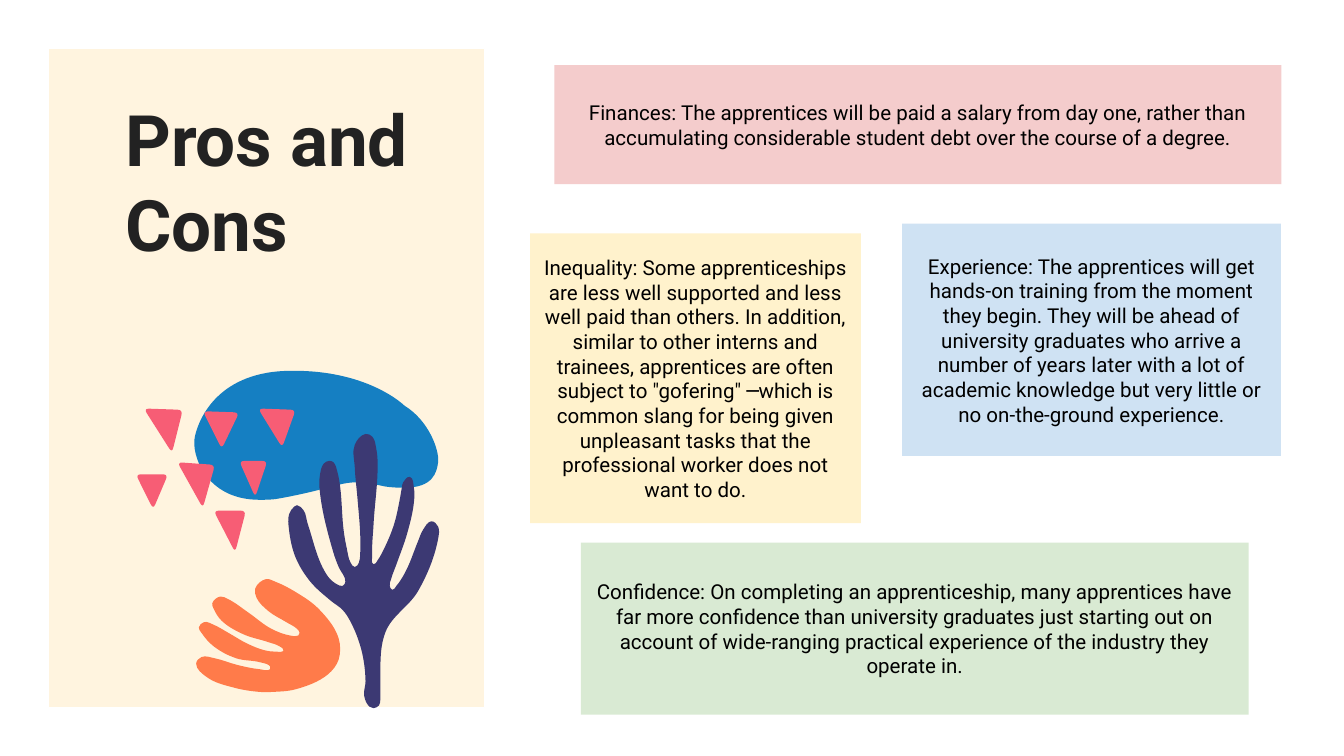
from dataclasses import dataclass
from math import dist

from lxml.etree import SubElement
from pptx import Presentation
from pptx.dml.color import RGBColor
from pptx.enum.shapes import MSO_SHAPE
from pptx.enum.text import MSO_ANCHOR, PP_ALIGN
from pptx.oxml.ns import qn
from pptx.util import Cm, Pt


@dataclass(frozen=True)
class Theme:
    font: str = "Roboto"
    title_size: int = 38
    body_size: int = 11
    title: str = "222222"
    body: str = "000000"
    white: str = "FFFFFF"
    panel: str = "FFF4DF"
    blue: str = "157FC2"
    pink: str = "F75D75"
    navy: str = "3C3973"
    orange: str = "FF7B4A"
    finances: str = "F4CCCC"
    inequality: str = "FFF2CC"
    experience: str = "CFE2F3"
    confidence: str = "D9EAD3"


# Outline points are in hundredths of an inch.
CLOUD = [((163, 276), (148, 311), (145, 325)), ((142, 338), (153, 372), (193, 372)),
         ((198, 372), (203, 372), (208, 371)), ((246, 364), (252, 359), (266, 359)),
         ((271, 359), (277, 360), (286, 362)), ((292, 363), (297, 363), (301, 363)),
         ((322, 363), (325, 352), (326, 344)), ((327, 335), (319, 313), (301, 302)),
         ((301, 302), (275, 276), (219, 276)), ((218, 276), (218, 276), (217, 276))]
TREE = [(272, 323), (264, 331), (264, 348), (266, 371), (268, 397), (268, 412),
        (267, 419), (264, 422), (261, 419), (258, 408), (256, 397), (251, 351),
        (248, 344), (245, 343), (241, 345), (238, 354), (238, 366), (248, 411),
        (252, 422), (257, 433), (255, 436), (251, 435), (244, 429), (229, 390),
        (226, 380), (221, 376), (219, 377), (215, 383), (215, 394), (220, 415),
        (231, 433), (246, 447), (255, 454), (261, 463), (269, 484), (272, 507),
        (271, 518), (275, 526), (278, 527), (282, 525), (283, 521), (283, 515),
        (287, 470), (311, 440), (326, 401), (326, 392), (321, 388), (315, 394),
        (311, 403), (303, 423), (298, 432), (295, 436), (292, 439), (290, 436),
        (291, 431), (295, 420), (303, 397), (308, 374), (308, 363), (305, 355),
        (300, 359), (299, 363), (298, 369), (293, 391), (284, 412), (281, 417),
        (278, 420), (277, 413), (278, 390), (281, 345), (280, 334), (277, 325)]
LEAF = [(198, 431), (190, 438), (191, 445), (200, 455), (213, 463), (221, 468),
        (223, 471), (222, 473), (216, 473), (202, 468), (185, 456), (170, 446),
        (164, 444), (158, 449), (159, 453), (165, 462), (181, 472), (200, 478),
        (208, 481), (211, 484), (205, 485), (197, 484), (184, 479), (170, 471),
        (159, 465), (152, 463), (148, 467), (150, 471), (159, 481), (176, 490),
        (194, 493), (201, 496), (201, 498), (193, 498), (177, 495), (160, 490),
        (150, 489), (146, 494), (154, 504), (175, 512), (194, 515), (202, 515),
        (220, 513), (244, 502), (252, 491), (252, 475), (237, 453), (219, 440),
        (205, 433)]
PETALS = [[(107, 304), (136, 305), (128, 337)],
          [(151, 306), (178, 307), (165, 334)],
          [(192, 304), (220, 305), (210, 333)],
          [(178, 343), (199, 343), (190, 370)],
          [(132, 344), (160, 346), (151, 378)],
          [(101, 353), (125, 353), (114, 379)],
          [(159, 380), (183, 380), (175, 411)]]


def unit(a, b):
    return tuple((q - p) / dist(a, b) for p, q in zip(a, b))


def move(point, direction, length):
    return tuple(p + length * q for p, q in zip(point, direction))


def neighbours(points):
    return zip(points[-1:] + points[:-1], points, points[1:] + points[:1])


def smooth(points):
    tangents = []
    for a, b, c in neighbours(points):
        bisector = tuple(u + v for u, v in zip(unit(a, b), unit(b, c)))
        tangents.append(unit((0, 0), bisector))
    curves = []
    for a, b, u, v in zip(points, points[1:] + points[:1],
                          tangents, tangents[1:] + tangents[:1]):
        reach = dist(a, b) / 3
        curves.append((move(a, u, reach), move(b, v, -reach), b))
    return curves


def round_corners(points, cut=4):
    curves = []
    for a, b, c in neighbours(points):
        back, ahead = unit(b, a), unit(b, c)
        start, end = move(b, back, cut), move(b, ahead, cut)
        curves.append((start, start, start))
        curves.append((move(b, back, cut / 3), move(b, ahead, cut / 3), end))
    return curves


def write(tf, text, *, font, size, color, bold=False, align=PP_ALIGN.LEFT,
          anchor=MSO_ANCHOR.TOP):
    tf.word_wrap = True
    tf.vertical_anchor = anchor
    tf.margin_left = tf.margin_right = tf.margin_top = tf.margin_bottom = Cm(0.25)
    p = tf.paragraphs[0]
    p.alignment = align
    r = p.add_run()
    r.text = text
    r.font.name = font
    r.font.size = Pt(size)
    r.font.bold = bold
    r.font.color.rgb = RGBColor.from_string(color)


class SlideBuilder:
    def __init__(self, slide, theme):
        self.s = slide
        self.theme = theme

    def paint(self, sp, fill, line=None):
        sp.shadow.inherit = False
        sp.fill.solid()
        sp.fill.fore_color.rgb = RGBColor.from_string(fill)
        if line:
            sp.line.color.rgb = RGBColor.from_string(line)
            sp.line.width = Pt(0.75)
        else:
            sp.line.fill.background()

    def rect(self, box, fill, line=None):
        sp = self.s.shapes.add_shape(MSO_SHAPE.RECTANGLE, *map(Cm, box))
        self.paint(sp, fill, line)
        return sp

    def outline(self, curves, fill):
        scale = Cm(2.54) / 100
        curves = [[(x * scale, y * scale) for x, y in curve] for curve in curves]
        ends = [curve[-1] for curve in curves]
        builder = self.s.shapes.build_freeform(*ends[-1], scale=1.0)
        builder.add_line_segments(ends, close=True)
        sp = builder.convert_to_shape()
        segments = list(sp._element.iter(qn("a:lnTo")))
        for segment, curve in zip(segments, curves):
            if curve[0] == curve[-1]:
                continue
            segment.tag = qn("a:cubicBezTo")
            segment.remove(segment[0])
            for x, y in curve:
                SubElement(segment, qn("a:pt"), x=str(round(x - sp.left)),
                           y=str(round(y - sp.top)))
        self.paint(sp, fill)

    def title(self, box, text):
        sp = self.s.shapes.add_textbox(*map(Cm, box))
        write(sp.text_frame, text, font=self.theme.font, size=self.theme.title_size,
              color=self.theme.title, bold=True)

    def card(self, box, fill, text):
        sp = self.rect(box, fill)
        write(sp.text_frame, text, font=self.theme.font, size=self.theme.body_size,
              color=self.theme.body, align=PP_ALIGN.CENTER, anchor=MSO_ANCHOR.MIDDLE)


def main():
    prs = Presentation()
    prs.slide_width, prs.slide_height = Cm(25.4), Cm(14.29)
    theme = Theme()
    b = SlideBuilder(prs.slides.add_slide(prs.slide_layouts[6]), theme)

    b.rect((0.92, 0.92, 8.24, 12.45), theme.panel, theme.white)
    b.outline(CLOUD, theme.blue)
    for petal in PETALS:
        b.outline(round_corners(petal), theme.pink)
    b.outline(smooth(TREE), theme.navy)
    b.outline(smooth(LEAF), theme.orange)
    b.title((2.12, 1.55, 5.99, 4.72), "Pros and Cons")

    cards = [
        ((10.98, 10.26, 12.62, 3.25), theme.confidence,
         "Confidence: On completing an apprenticeship, many apprentices have far more "
         "confidence than university graduates just starting out on account of "
         "wide-ranging practical experience of the industry they operate in."),
        ((17.05, 4.23, 7.16, 4.39), theme.experience,
         "Experience: The apprentices will get hands-on training from the moment they "
         "begin. They will be ahead of university graduates who arrive a number of years "
         "later with a lot of academic knowledge but very little or no on-the-ground "
         "experience."),
        ((10.02, 4.41, 6.25, 5.48), theme.inequality,
         "Inequality: Some apprenticeships are less well supported and less well paid "
         "than others. In addition, similar to other interns and trainees, apprentices "
         'are often subject to "gofering" ─which is common slang for being given '
         "unpleasant tasks that the professional worker does not want to do."),
        ((10.48, 1.23, 13.74, 2.25), theme.finances,
         "Finances: The apprentices will be paid a salary from day one, rather than "
         "accumulating considerable student debt over the course of a degree."),
    ]
    for card in cards:
        b.card(*card)

    prs.save("out.pptx")


if __name__ == "__main__":
    main()
